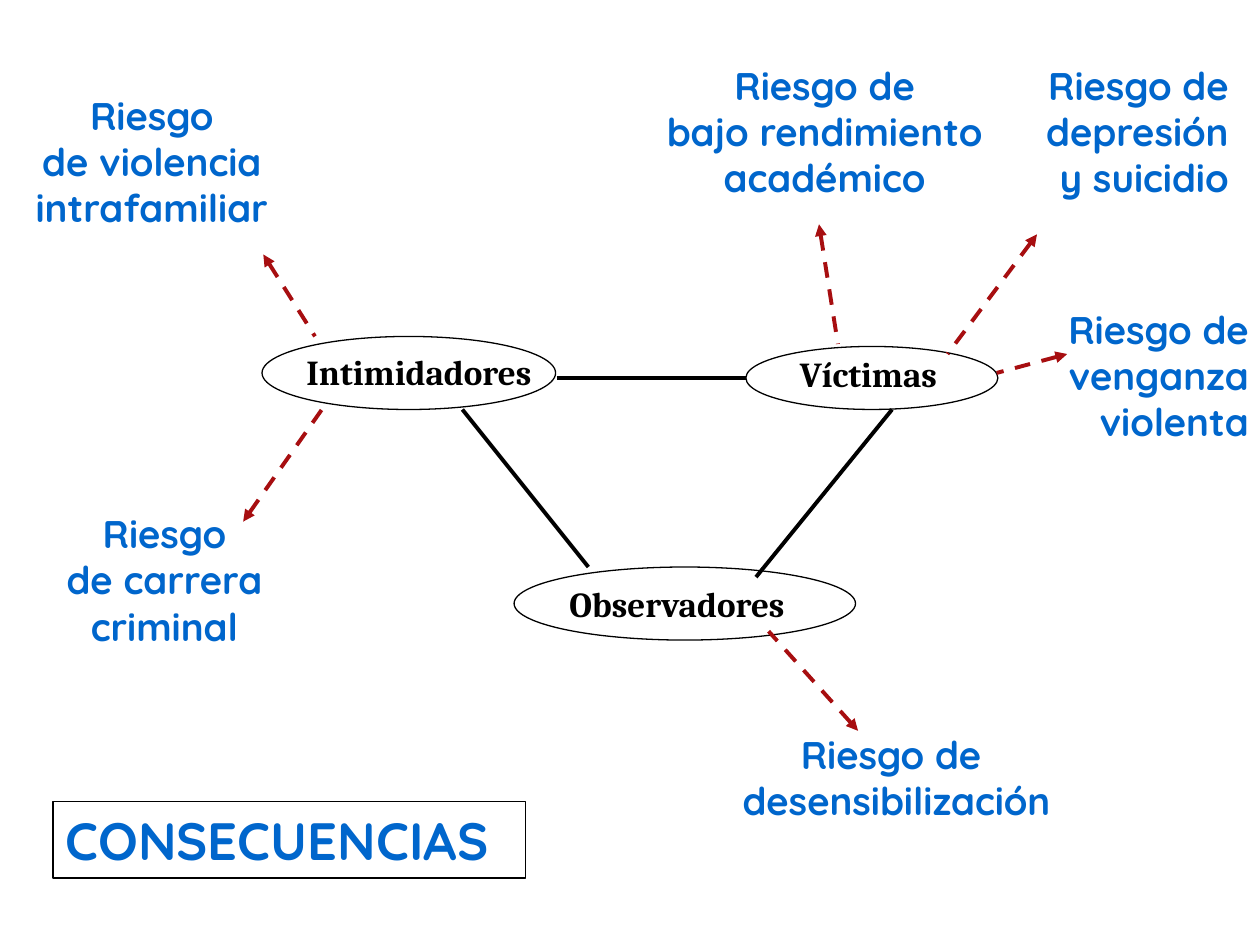
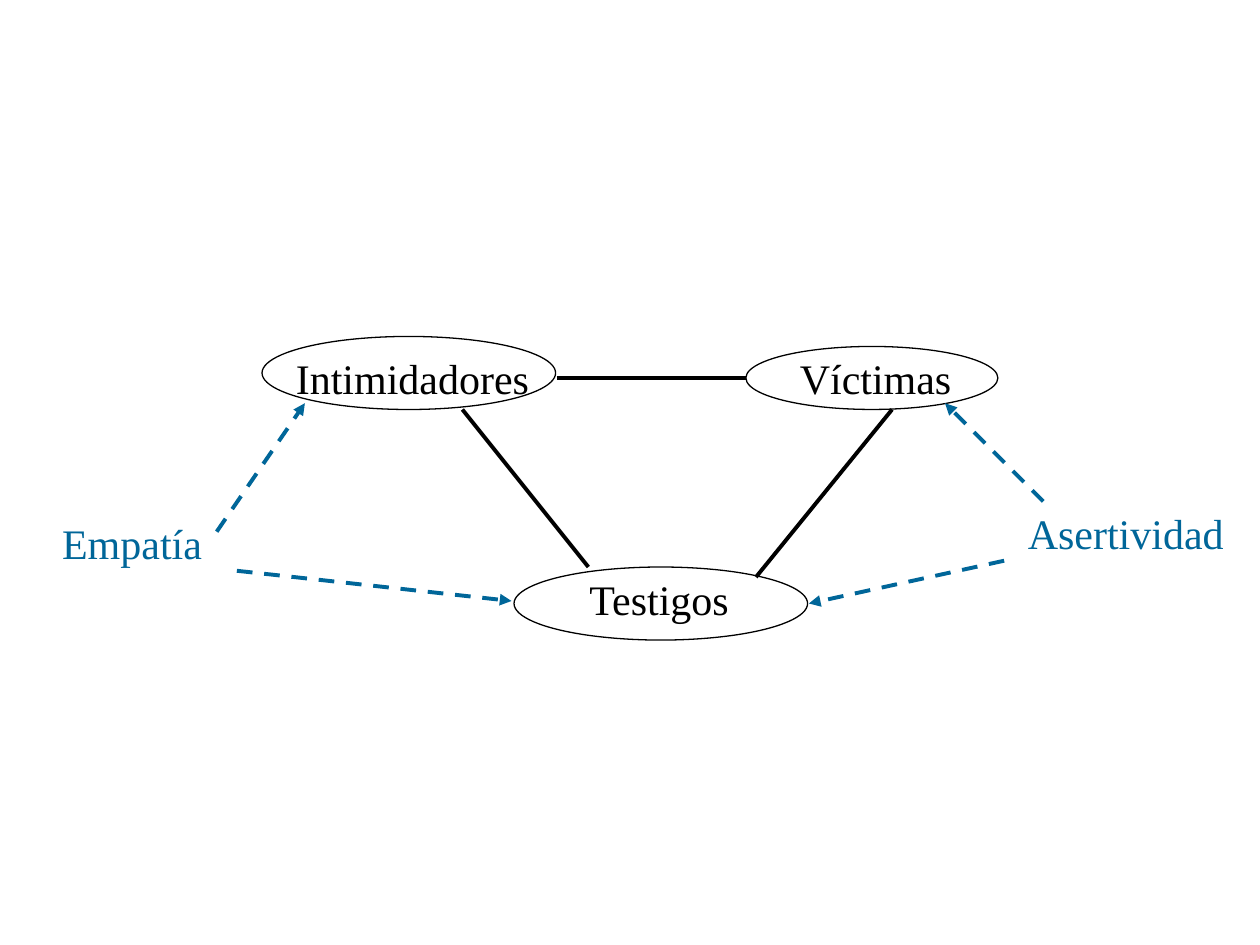
import pptx
import pptx.util
import pptx.dml.color
import pptx.enum.dml
import pptx.enum.shapes
import pptx.enum.text
import pptx.oxml.ns
import pptx.oxml.xmlchemy

PX = 9144
COLORS = {"ink": "000000", "risk": "0066CC", "danger": "A70E10", "skill": "006699"}
ALIGN = pptx.enum.text.PP_ALIGN
SHAPE = pptx.enum.shapes.MSO_SHAPE
LABEL_FONT = ("Cambria", 20, True)
RISK_FONT = ("Quicksand", 22, True)
TITLE_FONT = ("Quicksand", 30, True)
PLAIN_FONT = ("Times New Roman", 24, False)

BULLIES_OVAL = (208, 267, 233, 58)
VICTIMS_OVAL = (592, 275, 200, 50)
TRIANGLE_SIDES = [(442, 300, 592, 300), (367, 325, 467, 450), (600, 458, 708, 325)]


def scaled(lengths):
    """Turn px lengths into EMU."""
    return [pptx.util.Emu(length * PX) for length in lengths]


def rgb(color):
    """Look up a palette colour."""
    return pptx.dml.color.RGBColor.from_string(COLORS[color])


def write(frame, words, font, color, align, wrap):
    """Fill a text frame and format every run alike."""
    frame.word_wrap = wrap
    frame.auto_size = pptx.enum.text.MSO_AUTO_SIZE.SHAPE_TO_FIT_TEXT
    frame.text = words
    family, size, bold = font
    for paragraph in frame.paragraphs:
        paragraph.alignment = align
        for run in paragraph.runs:
            run.font.name = family
            run.font.size = pptx.util.Pt(size)
            run.font.bold = bold
            run.font.color.rgb = rgb(color)


def add_label(slide, box, words, font, color="ink", align=ALIGN.CENTER):
    """Add unwrapped text in a box."""
    label = slide.shapes.add_textbox(*scaled(box))
    write(label.text_frame, words, font, color, align, False)


def add_outline(slide, kind, box):
    """Add an unfilled shape with a thin black outline."""
    outline = slide.shapes.add_shape(kind, *scaled(box))
    outline.shadow.inherit = False
    outline.fill.background()
    outline.line.color.rgb = rgb("ink")
    outline.line.width = pptx.util.Pt(0.75)
    return outline


def add_line(slide, ends, color="ink", arrow_end=None):
    """Add a solid line, or a dashed arrow when an arrow end is named."""
    link = slide.shapes.add_connector(
        pptx.enum.shapes.MSO_CONNECTOR.STRAIGHT, *scaled(ends))
    link.line.color.rgb = rgb(color)
    link.line.width = pptx.util.Pt(2.25)
    if arrow_end:
        link.line.dash_style = pptx.enum.dml.MSO_LINE.DASH
        arrowhead = pptx.oxml.xmlchemy.OxmlElement(arrow_end)
        arrowhead.set("type", "triangle")
        link.line._get_or_add_ln().append(arrowhead)
    properties = link._element.find(pptx.oxml.ns.qn("p:spPr"))
    properties.append(pptx.oxml.xmlchemy.OxmlElement("a:effectLst"))


def add_triangle(slide, labels, font, lower_oval):
    """Add the three roles and the lines that join them."""
    for words, box, align in labels:
        add_label(slide, box, words, font, align=align)
    for ends in TRIANGLE_SIDES:
        add_line(slide, ends)
    for oval in (BULLIES_OVAL, lower_oval, VICTIMS_OVAL):
        add_outline(slide, SHAPE.OVAL, oval)


def add_consequences(slide):
    """Build the slide of risks for each role."""
    roles = [
        ("Intimidadores", (227, 273, 211, 44), ALIGN.CENTER),
        ("Víctimas", (625, 275, 134, 43), ALIGN.LEFT),
        ("Observadores", (442, 457, 207, 43), ALIGN.LEFT),
    ]
    add_triangle(slide, roles, LABEL_FONT, (408, 450, 271, 58))
    risks = [
        ("Riesgo\nde violencia\nintrafamiliar", (17, 68, 207, 121),
         ALIGN.CENTER, (209, 202, 250, 267)),
        ("Riesgo de\nvenganza\nviolenta", (831, 238, 170, 121),
         ALIGN.RIGHT, (847, 281, 791, 296)),
        ("Riesgo de\ndepresión\ny suicidio", (815, 44, 170, 121),
         ALIGN.RIGHT, (823, 186, 752, 281)),
        ("Riesgo\nde carrera\ncriminal", (41, 400, 179, 121),
         ALIGN.CENTER, (193, 414, 259, 320)),
        ("Riesgo de\nbajo rendimiento\nacadémico", (516, 44, 277, 121),
         ALIGN.CENTER, (650, 178, 665, 273)),
        ("Riesgo de \ndesensibilización", (575, 575, 273, 83),
         ALIGN.CENTER, (681, 580, 610, 501)),
    ]
    for words, box, align, arrow in risks:
        add_label(slide, box, words, RISK_FONT, "risk", align)
        add_line(slide, arrow, "danger", "a:headEnd")
    title = add_outline(slide, SHAPE.RECTANGLE, (42, 636, 375, 61))
    write(title.text_frame, "CONSECUENCIAS", TITLE_FONT, "risk", ALIGN.LEFT, True)


def add_skills(slide):
    """Build the slide of skills that help each role."""
    roles = [
        ("Intimidadores", (225, 275, 205, 50), ALIGN.LEFT),
        ("Víctimas", (625, 275, 140, 50), ALIGN.LEFT),
        ("Testigos", (458, 450, 132, 51), ALIGN.LEFT),
    ]
    add_triangle(slide, roles, PLAIN_FONT, (408, 450, 233, 58))
    skills = [
        ("Asertividad", (805, 398, 177, 51),
         [(797, 445, 642, 479), (828, 398, 750, 320)]),
        ("Empatía ", (39, 406, 140, 51),
         [(188, 453, 406, 477), (172, 422, 242, 320)]),
    ]
    for words, box, arrows in skills:
        add_label(slide, box, words, PLAIN_FONT, "skill")
        for arrow in arrows:
            add_line(slide, arrow, "skill", "a:tailEnd")


def main():
    """Build and save the presentation."""
    deck = pptx.Presentation()
    deck.slide_width, deck.slide_height = scaled((1000, 750))
    for build in (add_consequences, add_skills):
        build(deck.slides.add_slide(deck.slide_layouts[6]))
    deck.save("out.pptx")


if __name__ == "__main__":
    main()
